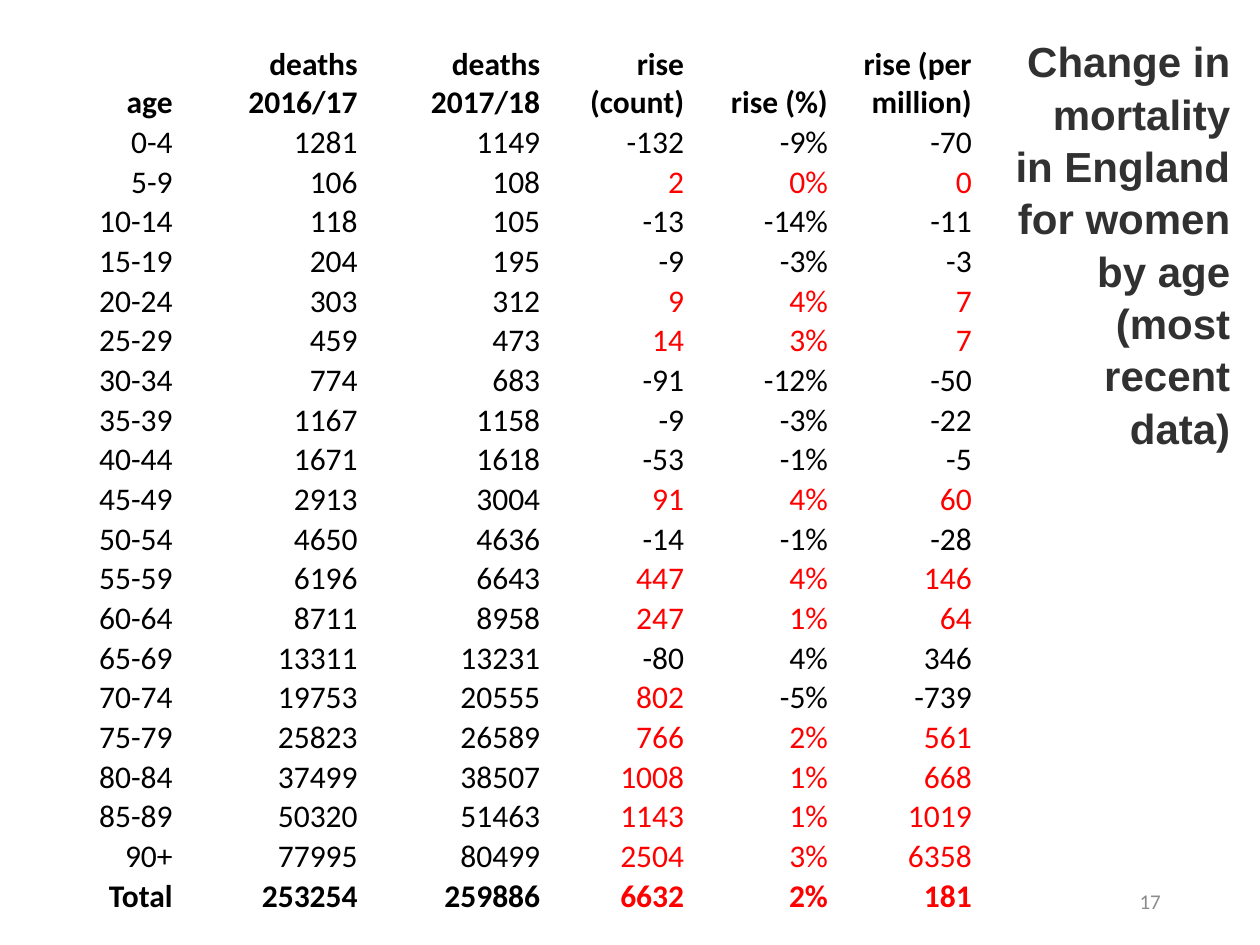
from dataclasses import dataclass

from pptx import Presentation
from pptx.dml.color import RGBColor
from pptx.enum.text import MSO_ANCHOR, PP_ALIGN
from pptx.util import Cm, Pt


@dataclass(frozen=True)
class Theme:
    """Colours, fonts and type sizes of the slide."""
    ink: str = "000000"
    rise: str = "FF0000"
    title: str = "323132"
    muted: str = "8C8C8C"
    body_font: str = "Calibri"
    title_font: str = "Arial"
    body_size: int = 18
    title_size: int = 24
    number_size: int = 12


THEME = Theme()
TITLE = "Change in mortality in England for women by age (most recent data)"
COLUMN_WIDTHS = (3.2, 3.73, 3.68, 2.9, 2.9, 2.9)
HEADER_HEIGHT = 1.47
ROW_HEIGHT = 0.8
MORTALITY = (
    ("age", "deaths 2016/17", "deaths 2017/18", "rise (count)", "rise (%)", "rise (per million)"),
    ("0-4", "1281", "1149", "-132", "-9%", "-70"),
    ("5-9", "106", "108", "2", "0%", "0"),
    ("10-14", "118", "105", "-13", "-14%", "-11"),
    ("15-19", "204", "195", "-9", "-3%", "-3"),
    ("20-24", "303", "312", "9", "4%", "7"),
    ("25-29", "459", "473", "14", "3%", "7"),
    ("30-34", "774", "683", "-91", "-12%", "-50"),
    ("35-39", "1167", "1158", "-9", "-3%", "-22"),
    ("40-44", "1671", "1618", "-53", "-1%", "-5"),
    ("45-49", "2913", "3004", "91", "4%", "60"),
    ("50-54", "4650", "4636", "-14", "-1%", "-28"),
    ("55-59", "6196", "6643", "447", "4%", "146"),
    ("60-64", "8711", "8958", "247", "1%", "64"),
    ("65-69", "13311", "13231", "-80", "4%", "346"),
    ("70-74", "19753", "20555", "802", "-5%", "-739"),
    ("75-79", "25823", "26589", "766", "2%", "561"),
    ("80-84", "37499", "38507", "1008", "1%", "668"),
    ("85-89", "50320", "51463", "1143", "1%", "1019"),
    ("90+", "77995", "80499", "2504", "3%", "6358"),
    ("Total", "253254", "259886", "6632", "2%", "181"),
)


def write_text(frame, text, *, font=THEME.body_font, size=THEME.body_size,
               color=THEME.ink, bold=False, line_spacing=None):
    """Write one right-aligned paragraph into a text frame."""
    para = frame.paragraphs[0]
    para.alignment = PP_ALIGN.RIGHT
    para.line_spacing = line_spacing
    span = para.add_run()
    span.text = text
    span.font.name = font
    span.font.size = Pt(size)
    span.font.bold = bold
    span.font.color.rgb = RGBColor.from_string(color)


def add_text_box(page, text, left, top, width, height, anchor, margin_top=0.13, **style):
    """Add a wrapping text box and write its text."""
    box = page.shapes.add_textbox(Cm(left), Cm(top), Cm(width), Cm(height))
    frame = box.text_frame
    frame.word_wrap = True
    frame.vertical_anchor = anchor
    frame.margin_top = Cm(margin_top)
    write_text(frame, text, **style)


def cell_color(row, column):
    """Return red for a rise in an age group whose death count rose."""
    is_rise = column >= 3 and not row[3].startswith("-") and not row[column].startswith("-")
    return THEME.rise if is_rise else THEME.ink


def fill_cell(cell, text, **style):
    """Format one unfilled table cell and write its text."""
    cell.fill.background()
    cell.vertical_anchor = MSO_ANCHOR.BOTTOM
    cell.margin_left = cell.margin_right = Cm(0.18)
    cell.margin_top = cell.margin_bottom = 0
    write_text(cell.text_frame, text, **style)


def add_mortality_table(page, left, top):
    """Add the table of deaths and rises by age."""
    height = HEADER_HEIGHT + ROW_HEIGHT * (len(MORTALITY) - 1)
    table = page.shapes.add_table(len(MORTALITY), len(COLUMN_WIDTHS), Cm(left), Cm(top),
                                  Cm(sum(COLUMN_WIDTHS)), Cm(height)).table
    table.first_row = table.horz_banding = False
    for column, width in zip(table.columns, COLUMN_WIDTHS):
        column.width = Cm(width)
    for index, row in enumerate(MORTALITY):
        is_header = index == 0
        table.rows[index].height = Cm(HEADER_HEIGHT if is_header else ROW_HEIGHT)
        for column, text in enumerate(row):
            color = THEME.ink if is_header else cell_color(row, column)
            fill_cell(table.cell(index, column), text, color=color,
                      bold=is_header or row[0] == "Total")


def main():
    """Build and save the slide."""
    deck = Presentation()
    deck.slide_width, deck.slide_height = Cm(25.4), Cm(19.05)
    page = deck.slides.add_slide(deck.slide_layouts[6])
    add_mortality_table(page, 0.46, 0.91)
    add_text_box(page, "17", 17.93, 17.65, 5.72, 1.02, MSO_ANCHOR.MIDDLE,
                 size=THEME.number_size, color=THEME.muted)
    add_text_box(page, TITLE, 20.17, 0.43, 4.88, 9.25, MSO_ANCHOR.TOP, margin_top=0.25,
                 font=THEME.title_font, size=THEME.title_size, color=THEME.title,
                 bold=True, line_spacing=1.04)
    deck.save("out.pptx")


if __name__ == "__main__":
    main()
